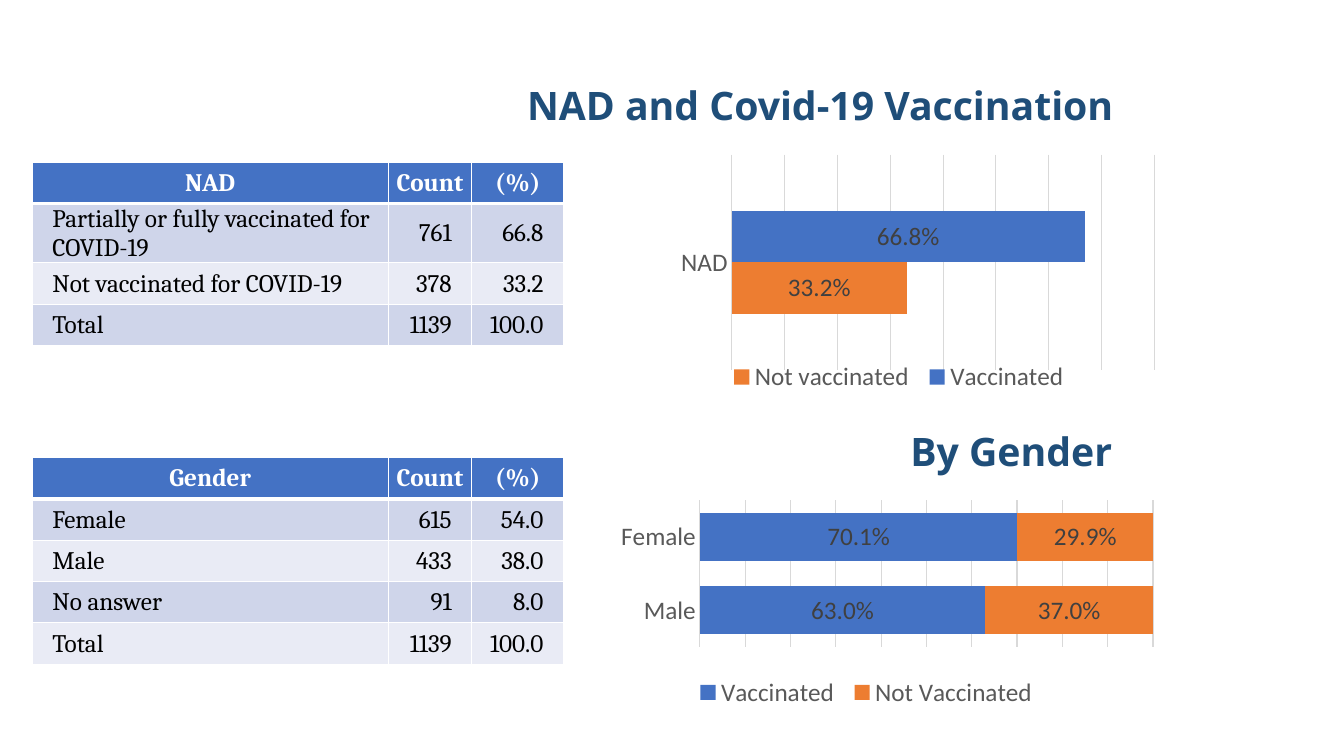
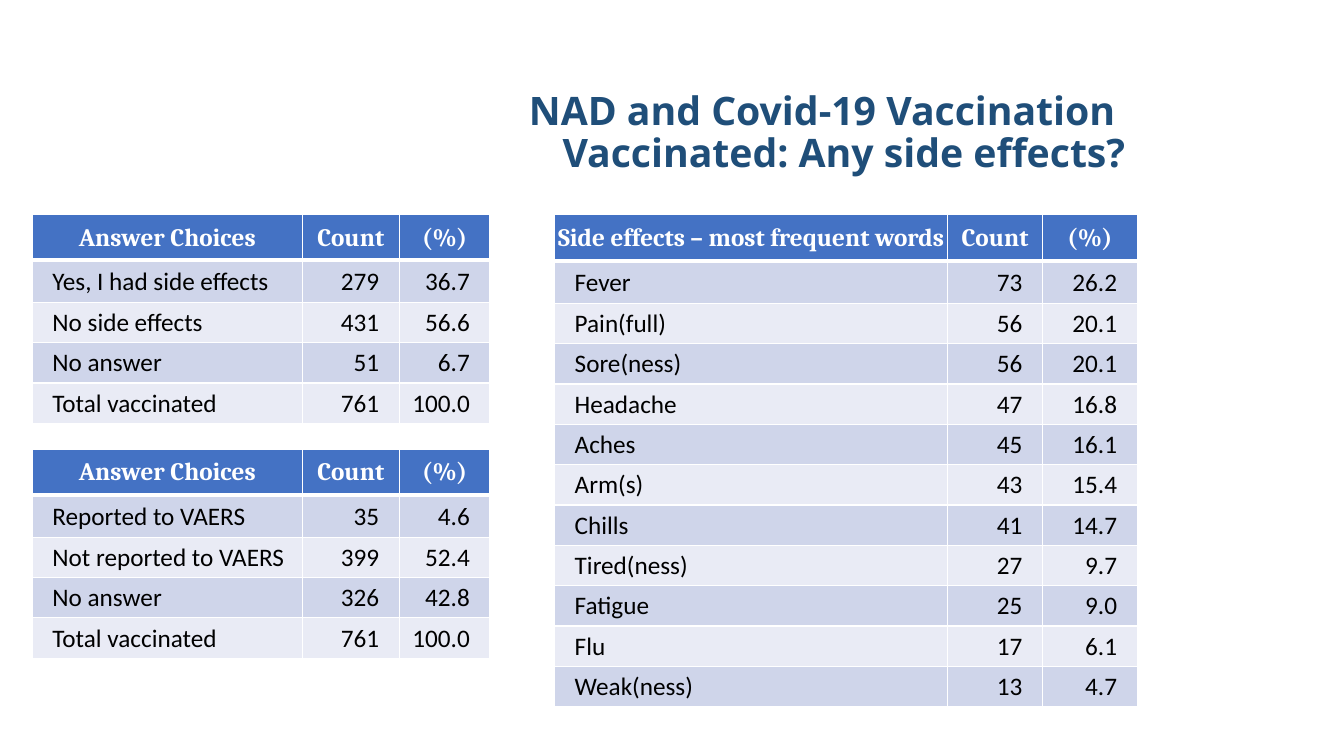
from lxml import etree
from pptx import Presentation
from pptx.chart.data import CategoryChartData
from pptx.dml.color import RGBColor
from pptx.enum.chart import XL_CHART_TYPE, XL_LABEL_POSITION, XL_LEGEND_POSITION, XL_TICK_LABEL_POSITION, XL_TICK_MARK
from pptx.enum.text import MSO_ANCHOR, MSO_AUTO_SIZE, PP_ALIGN
from pptx.oxml import parse_xml
from pptx.oxml.ns import nsdecls, qn
from pptx.util import Pt

EMU_PER_PX = 9144
BLUE, ORANGE, NAVY = "4472C4", "ED7D31", "1F4E79"
WHITE, BLACK, GRID = "FFFFFF", "000000", "D9D9D9"
AXIS_TEXT, LABEL_TEXT = "595959", "404040"
BANDS = ("CFD5EA", "E9EBF5")
TITLE_FONT = {"name": "Noto Sans", "size": Pt(28), "bold": True}
HEADER_FONT = {"name": "Cambria", "size": Pt(18), "bold": True}
BODY_FONT = {"name": "Calibri", "size": Pt(18), "bold": False}
CELL_INSETS = {"margin_left": 1, "margin_top": 1, "margin_right": 1, "margin_bottom": 0}
ONE_LINE_INSETS = {"margin_right": 22, "margin_bottom": 52}


def px(value):
    return int(value * EMU_PER_PX)


def color(value):
    return RGBColor.from_string(value)


def set_attributes(target, values):
    for name, value in values.items():
        setattr(target, name, value)


def set_font(font, values, font_color):
    set_attributes(font, values)
    font.color.rgb = color(font_color)


def set_insets(target, insets):
    set_attributes(target, {name: px(value) for name, value in insets.items()})


def format_heading(shape, text, box, insets):
    set_attributes(shape, dict(zip(("left", "top", "width", "height"), map(px, box))))
    frame = shape.text_frame
    set_attributes(frame, {"text": text, "word_wrap": True, "auto_size": MSO_AUTO_SIZE.NONE,
                           "vertical_anchor": MSO_ANCHOR.BOTTOM})
    set_insets(frame, insets)
    paragraph = frame.paragraphs[0]
    set_attributes(paragraph, {"alignment": PP_ALIGN.RIGHT, "line_spacing": 0.9})
    for run in paragraph.runs:
        set_font(run.font, TITLE_FONT, NAVY)


def add_title_slide(presentation, text, box, insets):
    slide = presentation.slides.add_slide(presentation.slide_layouts[5])
    format_heading(slide.shapes.title, text, box, insets)
    return slide


def set_borders(cell, top, bottom):
    properties = cell._tc.get_or_add_tcPr()
    for index, (edge, points) in enumerate({"L": 1, "R": 1, "T": top, "B": bottom}.items()):
        properties.insert(index, parse_xml(
            f'<a:ln{edge} {nsdecls("a")} w="{Pt(points)}"><a:solidFill>'
            f'<a:srgbClr val="{WHITE}"/></a:solidFill></a:ln{edge}>'))


def format_cell(cell, text, row, column, body_font):
    header = row == 0
    cell.text = text
    cell.vertical_anchor = MSO_ANCHOR.MIDDLE
    cell.fill.solid()
    cell.fill.fore_color.rgb = color(BLUE if header else BANDS[(row - 1) % 2])
    insets = dict(CELL_INSETS)
    alignment = PP_ALIGN.CENTER
    if not header:
        insets["margin_right" if column else "margin_left"] = 20
        alignment = PP_ALIGN.RIGHT if column else PP_ALIGN.LEFT
    set_insets(cell, insets)
    set_borders(cell, 3 if row == 1 else 1, 3 if header else 1)
    paragraph = cell.text_frame.paragraphs[0]
    paragraph.alignment = alignment
    set_font(paragraph.runs[0].font, HEADER_FONT if header else body_font,
             WHITE if header else BLACK)


def add_data_table(slide, left, top, widths, heights, heading, records, body_font):
    rows = [(heading, "Count", "(%)"), *records]
    heights = heights + heights[-1:] * (len(rows) - len(heights))
    table = slide.shapes.add_table(len(rows), len(widths), px(left), px(top),
                                   px(sum(widths)), px(sum(heights))).table
    for column, width in zip(table.columns, widths):
        column.width = px(width)
    for row, height in zip(table.rows, heights):
        row.height = px(height)
    for row_index, values in enumerate(rows):
        for column_index, text in enumerate(values):
            format_cell(table.cell(row_index, column_index), text,
                        row_index, column_index, body_font)


def set_layout(element, position, inner=False):
    for old in element.findall(qn("c:layout")):
        element.remove(old)
    layout = etree.Element(qn("c:layout"))
    manual = etree.SubElement(layout, qn("c:manualLayout"))
    settings = {"layoutTarget": "inner"} if inner else {}
    settings.update(xMode="edge", yMode="edge", **dict(zip("xywh", position)))
    for name, value in settings.items():
        etree.SubElement(manual, qn(f"c:{name}")).set("val", str(value))
    if inner:
        element.insert(0, layout)
    else:
        element.find(qn("c:legendPos")).addnext(layout)


def add_bar_chart(slide, box, chart_type, categories, series, number_format,
                  maximum, gap, overlap, plot_position, legend_position):
    data = CategoryChartData(number_format=number_format)
    data.categories = categories
    for name, values in series:
        data.add_series(name, values)
    chart = slide.shapes.add_chart(chart_type, *map(px, box), data).chart
    set_attributes(chart, {"has_title": False, "has_legend": True})
    set_font(chart.font, {"name": "Calibri", "size": Pt(10)}, BLACK)
    set_attributes(chart.legend, {"position": XL_LEGEND_POSITION.BOTTOM,
                                  "include_in_layout": False})
    set_font(chart.legend.font, BODY_FONT, AXIS_TEXT)

    axis = chart.category_axis
    set_attributes(axis, {"reverse_order": True, "major_tick_mark": XL_TICK_MARK.NONE,
                          "minor_tick_mark": XL_TICK_MARK.NONE,
                          "tick_label_position": XL_TICK_LABEL_POSITION.NEXT_TO_AXIS})
    set_font(axis.tick_labels.font, BODY_FONT, AXIS_TEXT)
    value_axis = chart.value_axis
    set_attributes(value_axis, {"visible": False, "has_major_gridlines": True,
                                "minimum_scale": 0, "maximum_scale": maximum,
                                "major_unit": 0.1})
    for line in (axis.format.line, value_axis.major_gridlines.format.line):
        line.color.rgb = color(GRID)
        line.width = Pt(0.75)

    plot = chart.plots[0]
    set_attributes(plot, {"gap_width": gap, "overlap": overlap, "vary_by_categories": False})
    for bars, fill in zip(plot.series, (BLUE, ORANGE)):
        bars.format.fill.solid()
        bars.format.fill.fore_color.rgb = color(fill)
        labels = bars.data_labels
        set_attributes(labels, {"show_value": True, "number_format": number_format,
                                "number_format_is_linked": False,
                                "position": XL_LABEL_POSITION.CENTER})
        set_font(labels.font, BODY_FONT, LABEL_TEXT)
    set_layout(chart._chartSpace.chart.plotArea, plot_position, inner=True)
    set_layout(chart.legend._element, legend_position)


def build_vaccination_slide(presentation):
    slide = add_title_slide(presentation, "NAD and Covid-19 Vaccination",
                            (179, 52, 947, 128), ONE_LINE_INSETS)
    widths, heights = (353, 83, 91), [41]
    serif = {**HEADER_FONT, "bold": False}
    add_data_table(slide, 32, 161, widths, heights, "NAD", [
        ("Partially or fully vaccinated for COVID-19", "761", "66.8"),
        ("Not vaccinated for COVID-19", "378", "33.2"),
        ("Total", "1139", "100.0"),
    ], serif)
    add_data_table(slide, 32, 454, widths, heights, "Gender", [
        ("Female", "615", "54.0"),
        ("Male", "433", "38.0"),
        ("No answer", "91", "8.0"),
        ("Total", "1139", "100.0"),
    ], serif)
    add_bar_chart(slide, (586, 480, 569, 274), XL_CHART_TYPE.BAR_STACKED_100,
                  ("Female", "Male"),
                  (("Vaccinated", (0.701, 0.63)), ("Not Vaccinated", (0.299, 0.37))),
                  "###0.0%", 1, 52, 100, (0.19, 0.06, 0.79, 0.53), (0.17, 0.69, 0.62, 0.13))
    add_bar_chart(slide, (667, 148, 488, 274), XL_CHART_TYPE.BAR_CLUSTERED, ("NAD",),
                  (("Vaccinated", (0.668,)), ("Not vaccinated", (0.332,))),
                  "0.0%", 0.8, 219, 0, (0.12, 0.02, 0.86, 0.78), (0.1, 0.76, 0.72, 0.13))
    heading = slide.shapes.add_textbox(0, 0, 0, 0)
    format_heading(heading, "By Gender", (178, 395, 947, 128), ONE_LINE_INSETS)


def build_side_effects_slide(presentation):
    slide = add_title_slide(
        presentation, "NAD and Covid-19 Vaccination \vVaccinated: Any side effects?",
        (32, 52, 1094, 128), {"margin_right": 10, "margin_bottom": 5})
    widths, heights = (268, 96, 90), [45, 42, 40]
    add_data_table(slide, 32, 213, widths, heights, "Answer Choices", [
        ("Yes, I had side effects", "279", "36.7"),
        ("No side effects", "431", "56.6"),
        ("No answer", "51", "6.7"),
        ("Total vaccinated", "761", "100.0"),
    ], BODY_FONT)
    add_data_table(slide, 550, 213, (390, 94, 94), [46, 42, 40],
                   "Side effects – most frequent words", [
        ("Fever", "73", "26.2"),
        ("Pain(full)", "56", "20.1"),
        ("Sore(ness)", "56", "20.1"),
        ("Headache", "47", "16.8"),
        ("Aches", "45", "16.1"),
        ("Arm(s)", "43", "15.4"),
        ("Chills", "41", "14.7"),
        ("Tired(ness)", "27", "9.7"),
        ("Fatigue", "25", "9.0"),
        ("Flu", "17", "6.1"),
        ("Weak(ness)", "13", "4.7"),
    ], BODY_FONT)
    add_data_table(slide, 32, 446, widths, heights, "Answer Choices", [
        ("Reported to VAERS", "35", "4.6"),
        ("Not reported to VAERS", "399", "52.4"),
        ("No answer", "326", "42.8"),
        ("Total vaccinated", "761", "100.0"),
    ], BODY_FONT)


def main():
    presentation = Presentation()
    set_attributes(presentation, {"slide_width": px(1333), "slide_height": px(750)})
    build_vaccination_slide(presentation)
    build_side_effects_slide(presentation)
    presentation.save("out.pptx")


if __name__ == "__main__":
    main()
